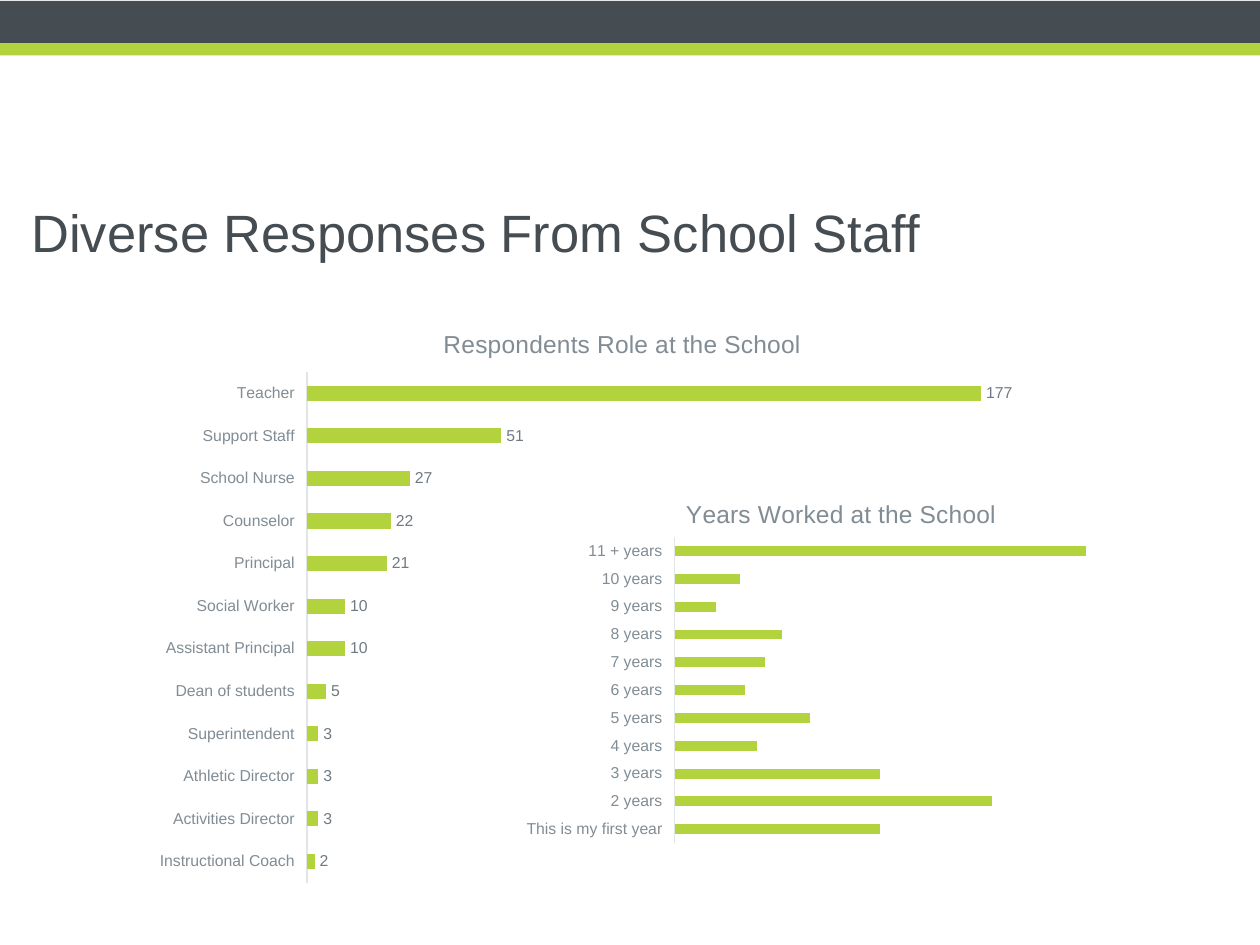
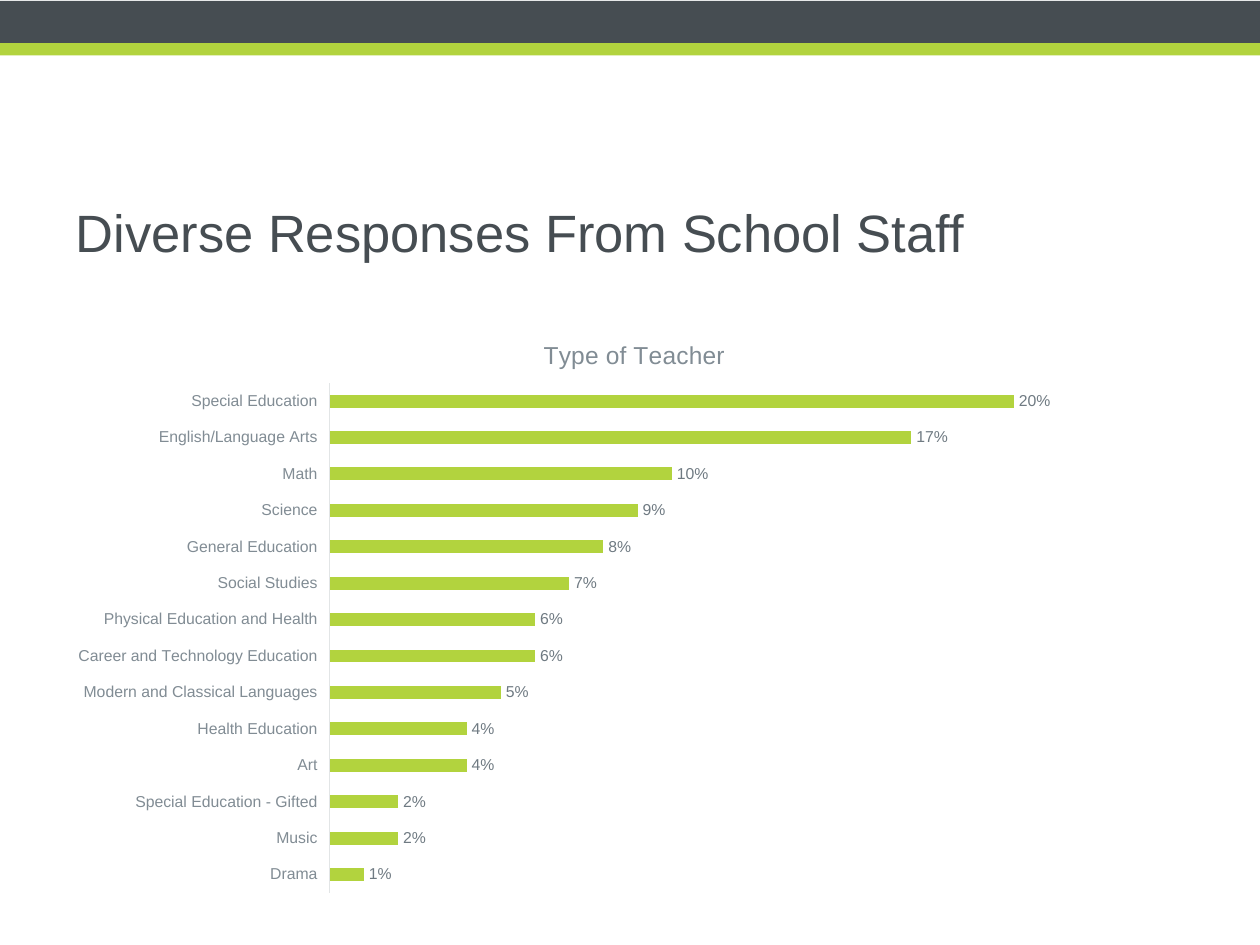
from dataclasses import dataclass

from lxml import etree
from pptx import Presentation
from pptx.chart.data import CategoryChartData
from pptx.dml.color import RGBColor
from pptx.enum.chart import XL_CHART_TYPE, XL_LABEL_POSITION, XL_TICK_LABEL_POSITION, XL_TICK_MARK
from pptx.enum.shapes import MSO_SHAPE
from pptx.enum.text import MSO_ANCHOR, PP_ALIGN
from pptx.oxml.ns import qn
from pptx.util import Cm, Pt

BAR = XL_CHART_TYPE.BAR_CLUSTERED
OUTSIDE = XL_LABEL_POSITION.OUTSIDE_END
LOW = XL_TICK_LABEL_POSITION.LOW
NO_TICK = XL_TICK_MARK.NONE
RECT = MSO_SHAPE.RECTANGLE
MIDDLE = MSO_ANCHOR.MIDDLE
LEFT = PP_ALIGN.LEFT


@dataclass(frozen=True)
class Theme:
    font: str = "Arial"
    dark: RGBColor = RGBColor(0x46, 0x4D, 0x52)
    lime: RGBColor = RGBColor(0xB2, 0xD3, 0x3E)
    grey: RGBColor = RGBColor(0x81, 0x8C, 0x94)
    value: RGBColor = RGBColor(0x6F, 0x7A, 0x82)
    rule: RGBColor = RGBColor(0xE2, 0xE5, 0xE6)
    title: int = 30
    head: int = 14
    body: int = 10
    label: int = 9


THEME = Theme()
WIDTH, HEIGHT = 25.4, 19.05
TITLE = "Diverse Responses From School Staff"

ROLES = {
    "Instructional Coach": 2, "Activities Director": 3, "Athletic Director": 3,
    "Superintendent": 3, "Dean of students": 5, "Assistant Principal": 10,
    "Social Worker": 10, "Principal": 21, "Counselor": 22, "School Nurse": 27,
    "Support Staff": 51, "Teacher": 177,
}
YEARS = {
    "This is my first year": 50, "2 years": 77, "3 years": 50, "4 years": 20,
    "5 years": 33, "6 years": 17, "7 years": 22, "8 years": 26, "9 years": 10,
    "10 years": 16, "11 + years": 100,
}
TYPES = {
    "Drama": 0.01, "Music": 0.02, "Special Education - Gifted": 0.02, "Art": 0.04,
    "Health Education": 0.04, "Modern and Classical Languages": 0.05,
    "Career and Technology Education": 0.06, "Physical Education and Health": 0.06,
    "Social Studies": 0.07, "General Education": 0.08, "Science": 0.09, "Math": 0.1,
    "English/Language Arts": 0.17, "Special Education": 0.2,
}


def style(font, size, color):
    font.name, font.size, font.bold = THEME.font, Pt(size), False
    font.color.rgb = color


def add_band(slide, top, height, color):
    band = slide.shapes.add_shape(RECT, 0, Cm(top), Cm(WIDTH), Cm(height))
    band.shadow.inherit = False
    band.fill.solid()
    band.fill.fore_color.rgb = color
    band.line.fill.background()


def add_page(deck, left, width):
    """Add a slide with the two bands and its title."""
    slide = deck.slides.add_slide(deck.slide_layouts[5])
    add_band(slide, 0.02, 0.86, THEME.dark)
    add_band(slide, 0.87, 0.25, THEME.lime)
    title = slide.shapes.title
    title.left, title.top = Cm(left), Cm(3.18)
    title.width, title.height = Cm(width), Cm(2.97)
    frame = title.text_frame
    frame.text = TITLE
    frame.vertical_anchor = MIDDLE
    para = frame.paragraphs[0]
    para.alignment = LEFT
    style(para.font, THEME.title, THEME.dark)
    return slide


def pin(parent, index, **parts):
    """Give a chart part a fixed place, as shares of the chart's box."""
    old = parent.find(qn("c:layout"))
    if old is not None:
        parent.remove(old)
    layout = etree.Element(qn("c:layout"))
    manual = etree.SubElement(layout, qn("c:manualLayout"))
    if "w" in parts:
        etree.SubElement(manual, qn("c:layoutTarget")).set("val", "inner")
    for key in ("x", "y"):
        etree.SubElement(manual, qn(f"c:{key}Mode")).set("val", "edge")
    for key, share in parts.items():
        etree.SubElement(manual, qn(f"c:{key}")).set("val", f"{share:.4f}")
    parent.insert(index, layout)


def add_bars(slide, box, plot, head, text, data, top, form=None):
    """Add a bar chart; plot and head are offsets in cm inside box."""
    source = CategoryChartData()
    source.categories = list(data)
    source.add_series("Series 1", list(data.values()))
    chart = slide.shapes.add_chart(BAR, *map(Cm, box), source).chart
    style(chart.font, THEME.body, THEME.dark)
    chart.has_legend = False

    chart.has_title = True
    frame = chart.chart_title.text_frame
    frame.text = text
    style(frame.paragraphs[0].font, THEME.head, THEME.grey)
    chart.chart_title.include_in_layout = False

    axis = chart.category_axis
    axis.major_tick_mark = axis.minor_tick_mark = NO_TICK
    axis.tick_label_position = LOW
    style(axis.tick_labels.font, THEME.label, THEME.grey)
    axis.format.line.color.rgb = THEME.rule
    axis.format.line.width = Pt(0.75)
    scale = chart.value_axis
    scale.minimum_scale, scale.maximum_scale = 0, top
    scale.has_major_gridlines = False
    scale.visible = False

    bars = chart.plots[0]
    bars.gap_width = 182
    bars.vary_by_categories = False
    fill = bars.series[0].format.fill
    fill.solid()
    fill.fore_color.rgb = THEME.lime
    if form:
        bars.has_data_labels = True
        labels = bars.data_labels
        labels.show_value = True
        labels.position = OUTSIDE
        labels.number_format = form
        labels.number_format_is_linked = False
        style(labels.font, THEME.label, THEME.value)

    wide, high = box[2:]
    x, y, w, h = plot
    area = chart.element.find(".//" + qn("c:plotArea"))
    pin(area, 0, x=x / wide, y=y / high, w=w / wide, h=h / high)
    pin(area.getparent().find(qn("c:title")), 1, x=head[0] / wide, y=head[1] / high)


def add_staff(deck):
    slide = add_page(deck, 0.38, 24.13)
    add_bars(slide, (3, 6.05, 18.92, 12.01), (3.19, 1.45, 15.36, 10.3), (5.85, 0.48),
             "Respondents Role at the School", ROLES, 200, "General")
    add_bars(slide, (10.52, 9.53, 12.7, 7.62), (3.08, 1.3, 9.13, 6.17), (3.22, 0.42),
             "Years Worked at the School", YEARS, 110)


def add_types(deck):
    slide = add_page(deck, 1.27, 22.86)
    add_bars(slide, (1.27, 6.25, 22.86, 12.01), (5.38, 1.47, 17.24, 10.28), (9.6, 0.5),
             "Type of Teacher", TYPES, 0.25, "0%")


def main():
    deck = Presentation()
    deck.slide_width, deck.slide_height = Cm(WIDTH), Cm(HEIGHT)
    add_staff(deck)
    add_types(deck)
    deck.save("out.pptx")


if __name__ == "__main__":
    main()
